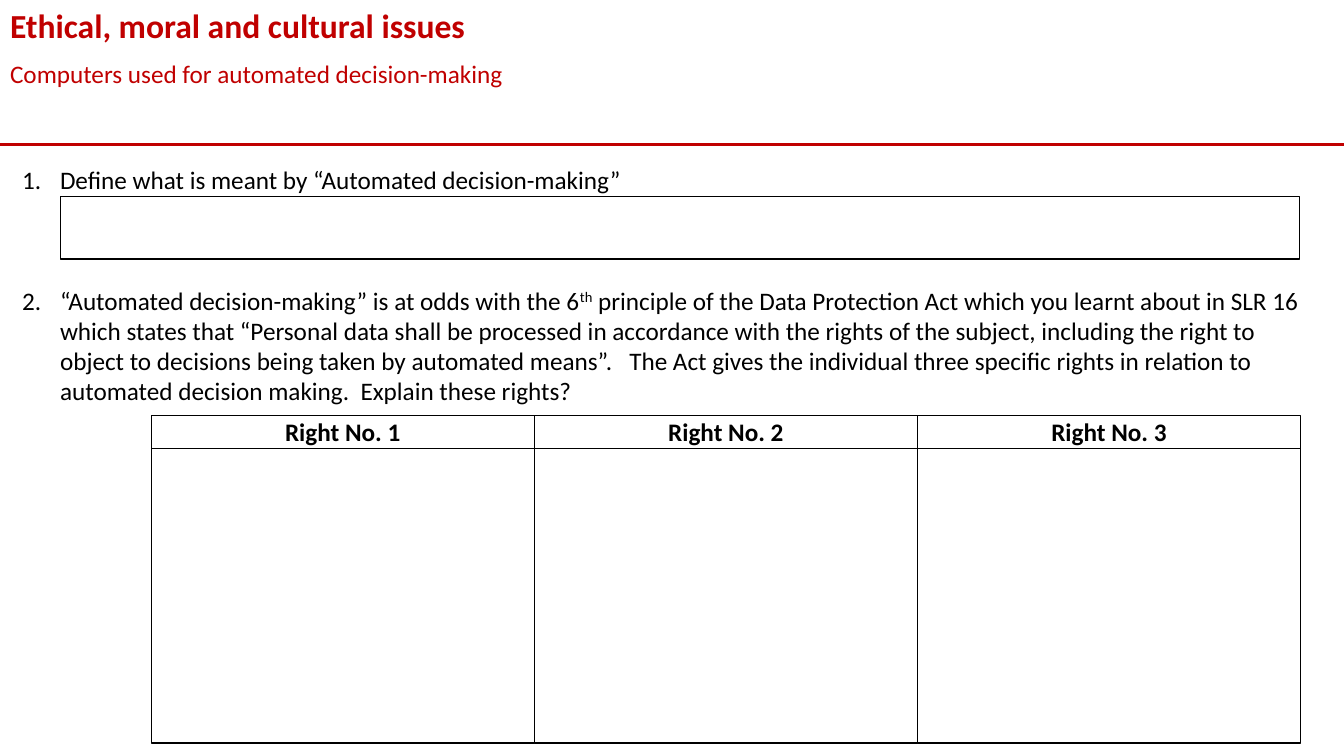
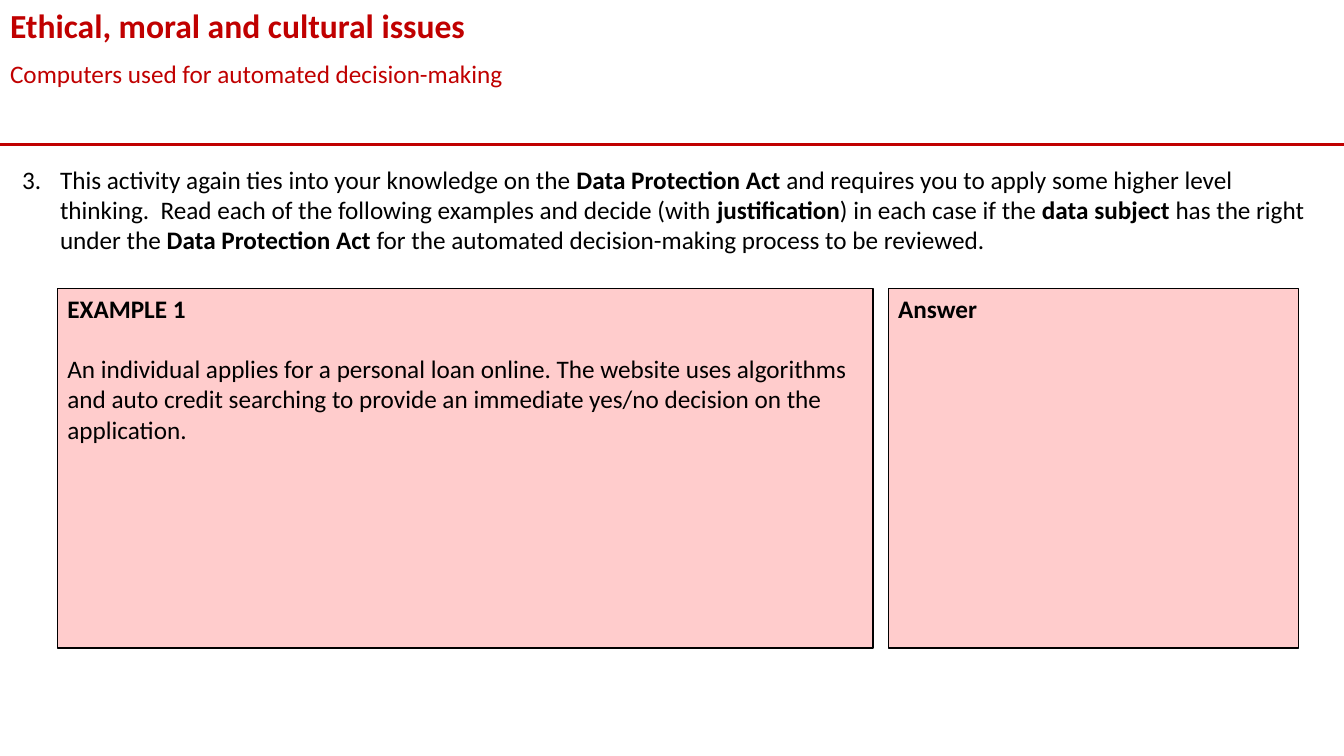
from lxml.etree import SubElement
from pptx import Presentation
from pptx.dml.color import RGBColor
from pptx.enum.shapes import MSO_CONNECTOR, MSO_SHAPE
from pptx.enum.text import MSO_ANCHOR as ANCHOR, MSO_AUTO_SIZE as AUTO_SIZE, PP_ALIGN as ALIGN
from pptx.oxml.ns import qn
from pptx.util import Inches, Pt

COLORS = {"accent": "C00000", "ink": "000000", "panel": "FFCCCC"}
FONT = "Calibri"
SLIDE_WIDTH = 13.33
TITLE = "Ethical, moral and cultural issues"
SUBTITLE = "Computers used for automated decision-making"


def write(paragraph, text, size=18, color="ink", bold=False, superscript=False):
    run = paragraph.add_run()
    run.text = text
    run.font.name = FONT
    run.font.size = Pt(size)
    run.font.bold = bold
    run.font.color.rgb = RGBColor.from_string(COLORS[color])
    if superscript:
        run.font._element.set("baseline", "30000")


def set_list(paragraph, start=None, indent=0):
    """Number the paragraph from start, or clear its bullet; indent is in points."""
    properties = paragraph._p.get_or_add_pPr()
    properties.set("marL", str(Pt(indent)))
    properties.set("indent", str(-Pt(indent)))
    if start is None:
        SubElement(properties, qn("a:buNone"))
    else:
        SubElement(properties, qn("a:buFont"), typeface="+mj-lt")
        SubElement(properties, qn("a:buAutoNum"), type="arabicPeriod", startAt=str(start))


presentation = Presentation()
presentation.slide_width = Inches(SLIDE_WIDTH)
presentation.slide_height = Inches(7.5)

# Shared layout: title, subtitle and question areas
layout = presentation.slide_layouts.get_by_name("Two Content")
areas = [(0, 0, SLIDE_WIDTH, 0.5), (0, 0.53, SLIDE_WIDTH, 0.4), (0.12, 1.58, 13.11, 2.52)]
for placeholder, area in zip(layout.placeholders, areas):
    placeholder.left, placeholder.top, placeholder.width, placeholder.height = map(Inches, area)

# Questions: first number and, per question, runs of text with their format
bold = {"bold": True}
question_sets = [
    (1, [
        [("Define what is meant by “Automated decision-making”", {})],
        [
            ("“Automated decision-making” is at odds with the 6", {}),
            ("th", {"superscript": True}),
            (" principle of the Data Protection Act which you learnt about in SLR 16 which "
             "states that “Personal data shall be processed in accordance with the rights of "
             "the subject, including the right to object to decisions being taken by automated "
             "means”.   The Act gives the individual three specific rights in relation to "
             "automated decision making.  Explain these rights?", {}),
        ],
    ]),
    (3, [
        [
            ("This activity again ties into your knowledge on the ", {}),
            ("Data Protection Act ", bold),
            ("and requires you to apply some higher level thinking.  Read each of the "
             "following examples and decide (with ", {}),
            ("justification", bold),
            (") in each case if the ", {}),
            ("data subject ", bold),
            ("has the right under the ", {}),
            ("Data Protection Act ", bold),
            ("for the automated decision-making process to be reviewed.", {}),
        ],
    ]),
]

# Header and questions of each slide
slides = []
for start, questions in question_sets:
    slide = presentation.slides.add_slide(layout)
    slides.append(slide)
    title, subtitle, body = slide.placeholders
    for placeholder in (title, subtitle, body):
        placeholder.text_frame.auto_size = AUTO_SIZE.NONE
        placeholder.text_frame.vertical_anchor = ANCHOR.TOP

    paragraph = title.text_frame.paragraphs[0]
    paragraph.alignment = ALIGN.LEFT
    write(paragraph, TITLE, size=24, color="accent", bold=True)

    paragraph = subtitle.text_frame.paragraphs[0]
    set_list(paragraph)
    paragraph.space_before = Pt(0)
    write(paragraph, SUBTITLE, color="accent")

    for number, question in enumerate(questions):
        paragraph = body.text_frame.add_paragraph() if number else body.text_frame.paragraphs[0]
        set_list(paragraph, start, indent=27)
        paragraph.space_before = Pt(64.5 if number else 0)
        for text, style in question:
            write(paragraph, text, **style)

worksheet, example_slide = slides

# The question on the second slide is only three lines long
body = example_slide.placeholders[2]
body.left, body.top, body.width, body.height = map(Inches, (0.12, 1.58, 13.11, 1.01))

# Header rule, moved to the layout so that both slides show it
rule = worksheet.shapes.add_connector(
    MSO_CONNECTOR.STRAIGHT, Inches(0), Inches(1.43), Inches(SLIDE_WIDTH), Inches(1.43))
rule.line.color.rgb = RGBColor.from_string(COLORS["accent"])
rule.line.width = Pt(2.25)
SubElement(rule._element.spPr, qn("a:effectLst"))
layout.shapes.element.append(rule._element)

# Boxes: slide, area, fill, heading, text
example = ("An individual applies for a personal loan online. The website uses algorithms and "
           "auto credit searching to provide an immediate yes/no decision on the application.")
boxes = [
    (worksheet, (0.6, 1.95, 12.29, 0.62), None, None, None),
    (example_slide, (0.57, 2.86, 8.09, 3.57), "panel", "EXAMPLE 1", example),
    (example_slide, (8.81, 2.86, 4.07, 3.57), "panel", "Answer", None),
]

# Three rights, each a heading box above an answer box
RIGHT_WIDTH = 3.8
for column in range(3):
    left = 1.5 + column * RIGHT_WIDTH
    boxes += [
        (worksheet, (left, 4.45, RIGHT_WIDTH, 2.92), None, None, None),
        (worksheet, (left, 4.12, RIGHT_WIDTH, 0.33), None, f"Right No. {column + 1}", None),
    ]

for slide, area, fill, heading, text in boxes:
    shape = slide.shapes.add_shape(MSO_SHAPE.RECTANGLE, *map(Inches, area))
    shape.shadow.inherit = False
    shape.line.color.rgb = RGBColor.from_string(COLORS["ink"])
    shape.line.width = Pt(1)
    if fill:
        shape.fill.solid()
        shape.fill.fore_color.rgb = RGBColor.from_string(COLORS[fill])
    else:
        shape.fill.background()
    frame = shape.text_frame
    frame.word_wrap = True
    frame.vertical_anchor = ANCHOR.TOP if fill else ANCHOR.MIDDLE
    if heading:
        frame.paragraphs[0].alignment = ALIGN.LEFT if fill else ALIGN.CENTER
        write(frame.paragraphs[0], heading, bold=True)
    if text:
        paragraph = frame.add_paragraph()
        paragraph.alignment = ALIGN.LEFT
        paragraph.space_before = Pt(21.5)
        write(paragraph, text)

presentation.save("out.pptx")
